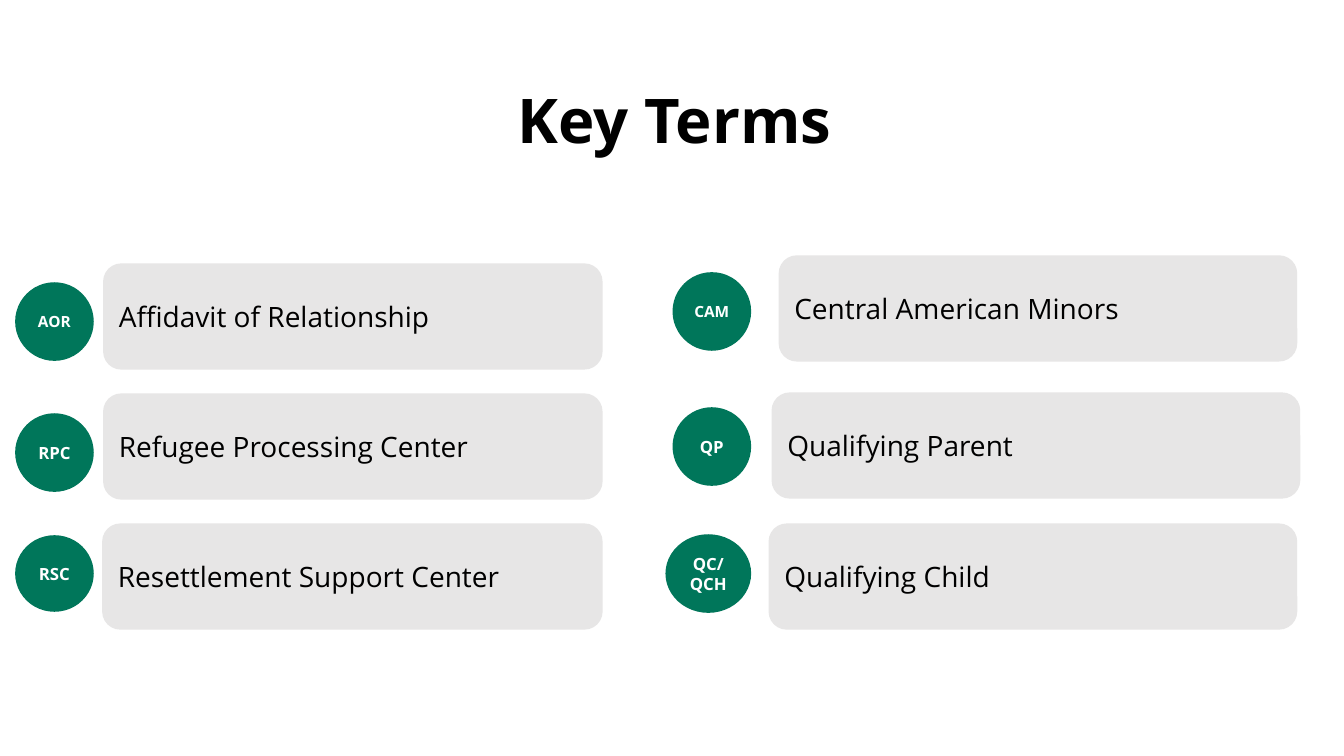
from pptx import Presentation
from pptx.dml.color import RGBColor
from pptx.enum.shapes import MSO_SHAPE
from pptx.enum.text import MSO_ANCHOR, PP_ALIGN
from pptx.util import Inches, Pt

COLORS = {"green": "00765A", "gray": "E7E6E6", "black": "000000", "white": "FFFFFF"}
FONT = "Open Sans"
CARD_HEIGHT = 1.04
BADGE_SIZE = 0.78

# Abbreviation, badge (left, top, width, height, text size), meaning, card (left, top, width)
TERMS = [
    ("AOR", (0.15, 2.8, BADGE_SIZE, BADGE_SIZE, 11), "Affidavit of Relationship", (1.03, 2.62, 4.94)),
    ("RPC", (0.15, 4.1, BADGE_SIZE, BADGE_SIZE, 12), "Refugee Processing Center", (1.03, 3.91, 4.94)),
    ("RSC", (0.15, 5.31, BADGE_SIZE, 0.76, 12), "Resettlement Support Center", (1.02, 5.2, 4.95)),
    ("CAM", (6.67, 2.7, BADGE_SIZE, BADGE_SIZE, 11), "Central American Minors", (7.73, 2.54, 5.13)),
    ("QP", (6.67, 4.04, BADGE_SIZE, BADGE_SIZE, 12), "Qualifying Parent", (7.66, 3.9, 5.23)),
    ("QC/QCH", (6.6, 5.3, 0.85, BADGE_SIZE, 12), "Qualifying Child", (7.63, 5.2, 5.23)),
]


def rgb(name):
    return RGBColor.from_string(COLORS[name])


def write(sp, text, size, color, bold, align, anchor):
    tf = sp.text_frame
    frame_format = {"word_wrap": True, "vertical_anchor": anchor}
    for name, value in frame_format.items():
        setattr(tf, name, value)
    p = tf.paragraphs[0]
    p.alignment = align
    r = p.add_run()
    r.text = text
    font_format = {"name": FONT, "size": Pt(size), "bold": bold}
    for name, value in font_format.items():
        setattr(r.font, name, value)
    r.font.color.rgb = rgb(color)


def add_title(slide, text):
    sp = slide.shapes.title
    box = {"left": 5.03, "top": 0.76, "width": 3.59, "height": 1.51}
    for name, value in box.items():
        setattr(sp, name, Inches(value))
    write(sp, text, 44, "black", True, PP_ALIGN.LEFT, MSO_ANCHOR.TOP)


def add_filled(slide, kind, box, fill):
    sp = slide.shapes.add_shape(kind, *map(Inches, box))
    sp.shadow.inherit = False
    sp.fill.solid()
    sp.fill.fore_color.rgb = rgb(fill)
    return sp


def add_card(slide, text, left, top, width):
    box = (left, top, width, CARD_HEIGHT)
    sp = add_filled(slide, MSO_SHAPE.ROUNDED_RECTANGLE, box, "gray")
    sp.line.color.rgb = rgb("gray")
    sp.line.width = Pt(1)
    write(sp, text, 20, "black", False, PP_ALIGN.LEFT, MSO_ANCHOR.MIDDLE)


def add_badge(slide, text, left, top, width, height, size):
    sp = add_filled(slide, MSO_SHAPE.OVAL, (left, top, width, height), "green")
    sp.line.fill.background()
    for side in ("margin_left", "margin_right"):
        setattr(sp.text_frame, side, Inches(0.05))
    write(sp, text, size, "white", True, PP_ALIGN.CENTER, MSO_ANCHOR.MIDDLE)


def main():
    prs = Presentation()
    prs.slide_width, prs.slide_height = Inches(13.33), Inches(7.5)
    slide = prs.slides.add_slide(prs.slide_layouts[5])

    # Heading
    add_title(slide, "Key Terms")

    # Terms: badge beside card
    for abbreviation, badge, meaning, card in TERMS:
        add_card(slide, meaning, *card)
        add_badge(slide, abbreviation, *badge)

    prs.save("out.pptx")


if __name__ == "__main__":
    main()
